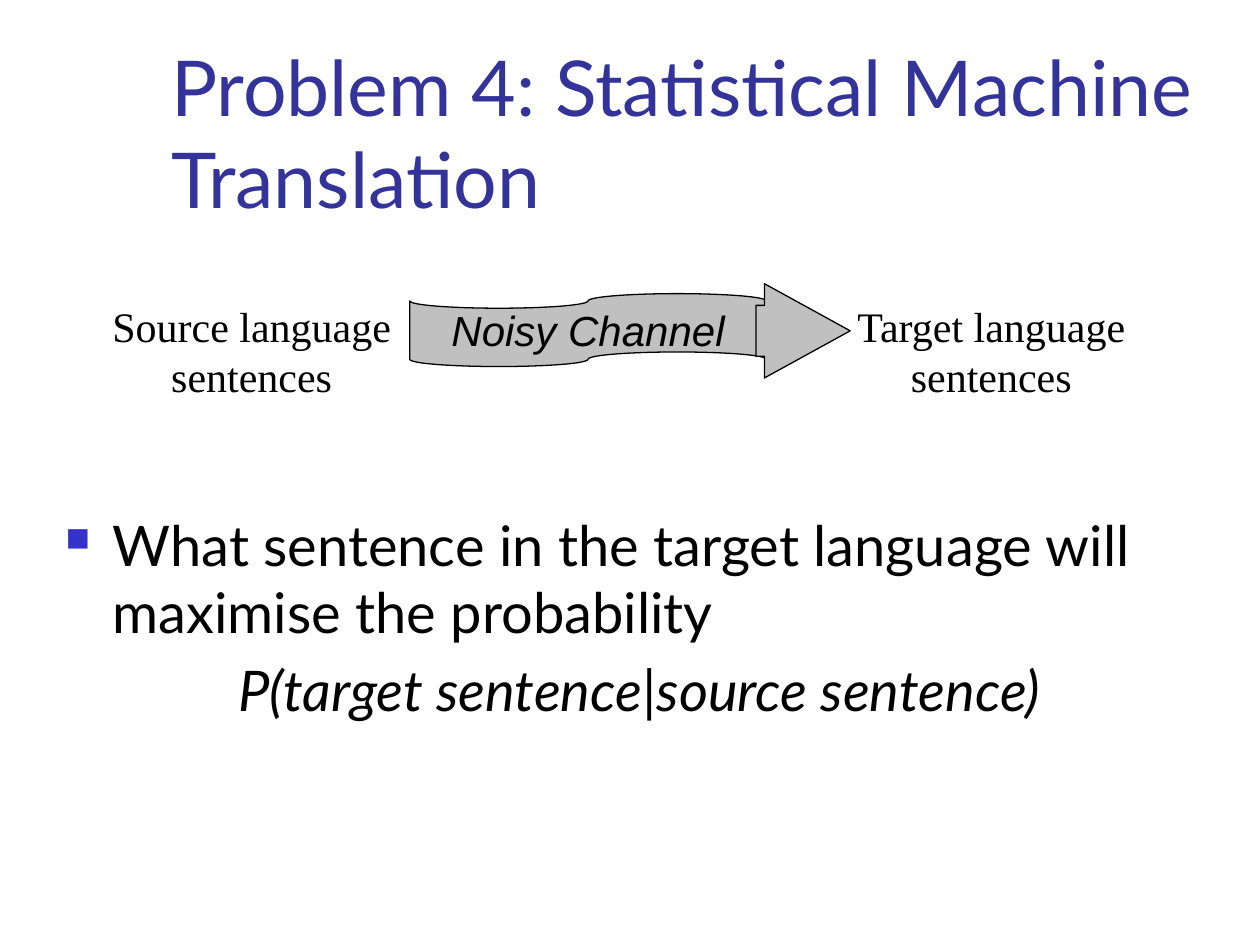
from lxml import etree
from pptx import Presentation
from pptx.dml.color import RGBColor
from pptx.enum.shapes import MSO_SHAPE
from pptx.enum.text import MSO_ANCHOR, PP_ALIGN
from pptx.oxml.ns import qn
from pptx.util import Cm, Pt

TAPE, ARROW = MSO_SHAPE.FLOWCHART_PUNCHED_TAPE, MSO_SHAPE.RIGHT_ARROW
TOP, MIDDLE, BOTTOM = MSO_ANCHOR.TOP, MSO_ANCHOR.MIDDLE, MSO_ANCHOR.BOTTOM
LEFT, CENTER = PP_ALIGN.LEFT, PP_ALIGN.CENTER
BLACK = RGBColor(0x00, 0x00, 0x00)
GRAY = RGBColor(0xC0, 0xC0, 0xC0)
TITLE_BLUE = RGBColor(0x33, 0x33, 0x99)
BULLET_BLUE = RGBColor(0x33, 0x33, 0xCC)


def add_text_box(s, left, top, width, height, anchor=TOP):
    """Add a wrapping text box and return its text frame."""
    tf = s.shapes.add_textbox(Cm(left), Cm(top), Cm(width), Cm(height)).text_frame
    tf.word_wrap = True
    tf.vertical_anchor = anchor
    return tf


def add_run(p, text, font, size, color=BLACK, italic=False, align=LEFT):
    """Add a styled run to an aligned paragraph."""
    p.alignment = align
    r = p.add_run()
    r.text = text
    r.font.name, r.font.size, r.font.italic = font, Pt(size), italic
    r.font.color.rgb = color


def set_indent(p, margin, indent=0):
    """Set the left margin and first-line indent of a paragraph."""
    pPr = p._p.get_or_add_pPr()
    pPr.set("marL", str(Cm(margin)))
    pPr.set("indent", str(Cm(indent)))


def add_bullet(p, char, color, percent):
    """Give a paragraph a coloured, scaled bullet."""
    pPr = p._p.get_or_add_pPr()
    clr = etree.SubElement(pPr, qn("a:buClr"))
    etree.SubElement(clr, qn("a:srgbClr"), val=str(color))
    etree.SubElement(pPr, qn("a:buSzPct"), val=str(percent * 1000))
    etree.SubElement(pPr, qn("a:buChar"), char=char)


def add_channel_part(s, kind, left, top, width, height):
    """Add a gray outlined shape of the channel."""
    sp = s.shapes.add_shape(kind, Cm(left), Cm(top), Cm(width), Cm(height))
    sp.shadow.inherit = False
    sp.fill.solid()
    sp.fill.fore_color.rgb = GRAY
    sp.line.color.rgb = BLACK
    sp.line.width = Pt(0.75)
    return sp


def add_channel(s):
    """Draw the noisy channel with its arrow head."""
    tape = add_channel_part(s, TAPE, 8.26, 5.92, 7.19, 1.47)
    tf = tape.text_frame
    tf.word_wrap = False
    tf.vertical_anchor = MIDDLE
    add_run(tf.paragraphs[0], "Noisy Channel", "Arial", 24, italic=True, align=CENTER)
    arrow = add_channel_part(s, ARROW, 15.24, 5.72, 1.9, 1.9)
    arrow.adjustments[0], arrow.adjustments[1] = 0.54, 0.91


def add_end_label(s, text, left, width):
    """Label one end of the channel."""
    p = add_text_box(s, left, 5.92, width, 2.29).paragraphs[0]
    p.line_spacing = Pt(29)
    add_run(p, text, "Times New Roman", 24, align=CENTER)


def add_question(s):
    """Add the bulleted question and its formula."""
    tf = add_text_box(s, 1.07, 10.16, 22.86, 8.13)
    p = tf.paragraphs[0]
    set_indent(p, 0.95, -0.95)
    add_bullet(p, "■", BULLET_BLUE, 60)
    add_run(p, "What sentence in the target language will maximise the probability", "Lato", 32)
    p = tf.add_paragraph()
    p.space_before = Pt(6)
    set_indent(p, 3.48)
    add_run(p, "P(target sentence|source sentence)", "Lato", 32, italic=True)


def main():
    """Build and save the slide."""
    prs = Presentation()
    prs.slide_width, prs.slide_height = Cm(25.4), Cm(19.05)
    s = prs.slides.add_slide(prs.slide_layouts[6])
    tf = add_text_box(s, 3.2, 0.58, 21.64, 4.06, BOTTOM)
    add_run(tf.paragraphs[0], "Problem 4: Statistical Machine Translation", "Lato", 44, TITLE_BLUE)
    add_question(s)
    add_channel(s)
    add_end_label(s, "Source language sentences", 1.9, 6.35)
    add_end_label(s, "Target language sentences", 16.71, 6.55)
    prs.save("out.pptx")


if __name__ == "__main__":
    main()
